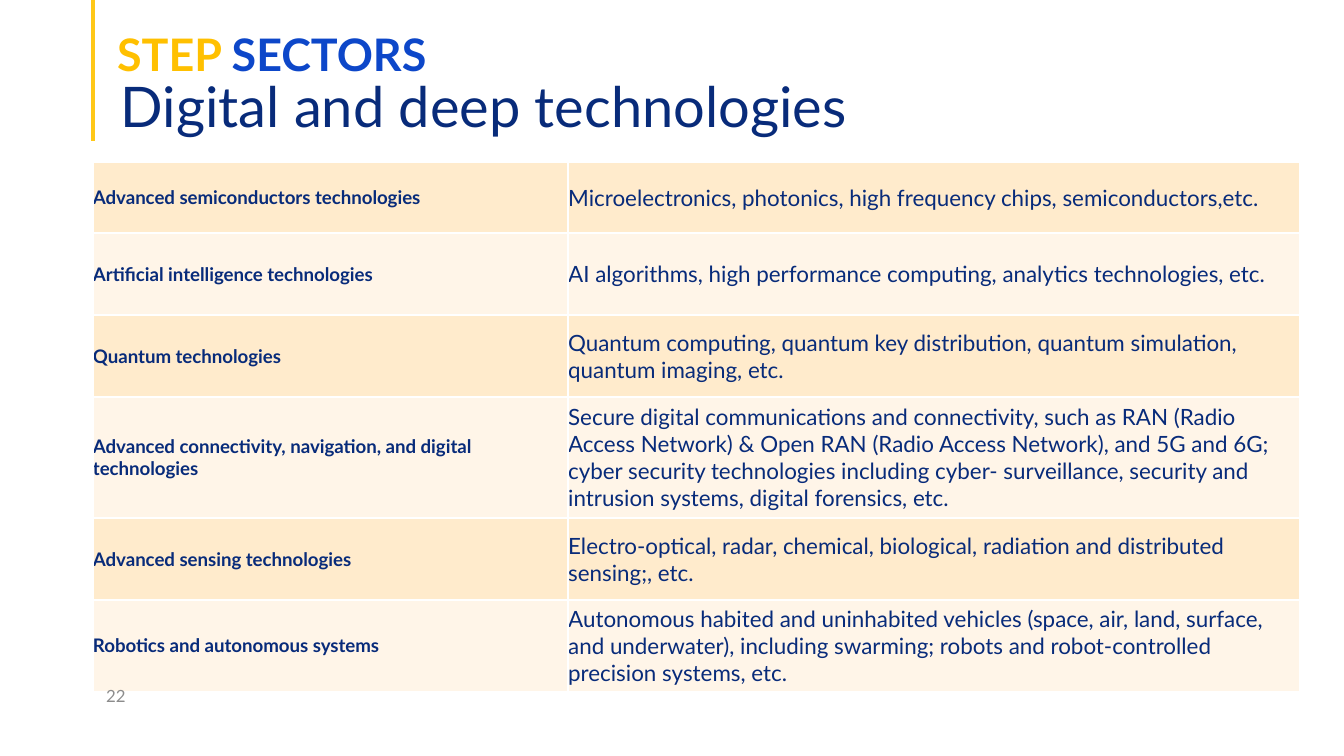
"""Build the STEP sectors slide on digital and deep technologies."""
from lxml import etree
from pptx import Presentation
from pptx.dml.color import RGBColor
from pptx.enum.shapes import MSO_CONNECTOR
from pptx.enum.text import MSO_ANCHOR
from pptx.oxml.ns import qn
from pptx.util import Pt

STRAIGHT = MSO_CONNECTOR.STRAIGHT
TOP, MIDDLE, BOTTOM = MSO_ANCHOR.TOP, MSO_ANCHOR.MIDDLE, MSO_ANCHOR.BOTTOM


class Theme:
    font = "Lato"
    navy = RGBColor.from_string("082B7A")
    blue = RGBColor.from_string("0D47C9")
    amber = RGBColor.from_string("FFC000")
    rule = RGBColor.from_string("FFC817")
    gray = RGBColor.from_string("8C8C8C")
    bands = [RGBColor.from_string("FFEBCC"), RGBColor.from_string("FFF5E8")]
    border = "FFFFFF"
    title_size, kicker_size, body_size, label_size, number_size = 30, 24, 12, 10, 9


def add_text(paragraph, text, size, color=Theme.navy, bold=False):
    run = paragraph.add_run()
    run.text = text
    run.font.name = Theme.font
    run.font.size = Pt(size)
    run.font.bold = bold
    run.font.color.rgb = color


def add_box(left, top, width, height, anchor=TOP, margins=(7.2, 3.6, 7.2, 3.6)):
    frame = slide.shapes.add_textbox(Pt(left), Pt(top), Pt(width), Pt(height)).text_frame
    frame.word_wrap = True
    frame.vertical_anchor = anchor
    frame.margin_left, frame.margin_top, frame.margin_right, frame.margin_bottom = map(Pt, margins)
    return frame.paragraphs[0]


presentation = Presentation()
presentation.slide_width, presentation.slide_height = Pt(720), Pt(405)
slide = presentation.slides.add_slide(presentation.slide_layouts[6])

left_edge = 49.8
rule = slide.shapes.add_connector(STRAIGHT, Pt(left_edge), Pt(0), Pt(left_edge), Pt(75.6))
rule.line.color.rgb = Theme.rule
rule.line.width = Pt(2.25)
etree.SubElement(rule._element.spPr, qn("a:effectLst"))

sectors = [
    (38.2, "Advanced semiconductors technologies",
     "Microelectronics, photonics, high frequency chips, semiconductors,etc."),
    (43.9, "Artificial intelligence technologies",
     "AI algorithms, high performance computing, analytics technologies, etc."),
    (43.9, "Quantum technologies",
     "Quantum computing, quantum key distribution, quantum simulation, quantum imaging, etc."),
    (64.8, "Advanced connectivity, navigation, and digital technologies",
     "Secure digital communications and connectivity, such as RAN (Radio Access Network) "
     "& Open RAN (Radio Access Network), and 5G and 6G; cyber security technologies including "
     "cyber- surveillance, security and intrusion systems, digital forensics, etc."),
    (43.9, "Advanced sensing technologies",
     "Electro-optical, radar, chemical, biological, radiation and distributed sensing;, etc."),
    (49, "Robotics and autonomous systems",
     "Autonomous habited and uninhabited vehicles (space, air, land, surface, and underwater), "
     "including swarming; robots and robot-controlled precision systems, etc."),
]
column_widths = [254.6, 392.2]
table_height = sum(height for height, _, _ in sectors)
table = slide.shapes.add_table(
    len(sectors), len(column_widths), Pt(left_edge), Pt(86.8),
    Pt(sum(column_widths)), Pt(table_height)).table
table.first_row = False
table.horz_banding = False
for column, width in zip(table.columns, column_widths):
    column.width = Pt(width)

for index, (height, label, examples) in enumerate(sectors):
    row = table.rows[index]
    row.height = Pt(height)
    formats = [(label, Theme.label_size, True), (examples, Theme.body_size, False)]
    for cell, (text, size, bold) in zip(row.cells, formats):
        cell.margin_left = cell.margin_top = cell.margin_right = cell.margin_bottom = 0
        cell.vertical_anchor = MIDDLE
        properties = cell._tc.get_or_add_tcPr()
        for side in ("a:lnL", "a:lnR", "a:lnT", "a:lnB"):
            line = etree.SubElement(properties, qn(side), w=str(Pt(1)))
            fill = etree.SubElement(line, qn("a:solidFill"))
            etree.SubElement(fill, qn("a:srgbClr"), val=Theme.border)
        cell.fill.solid()
        cell.fill.fore_color.rgb = Theme.bands[index % 2]
        add_text(cell.text_frame.paragraphs[0], text, size, bold=bold)

number = add_box(left_edge, 362.2, 162, 21.6, anchor=MIDDLE)
add_text(number, "22", Theme.number_size, color=Theme.gray)

title = add_box(57.6, 28.8, 620.6, 46, anchor=BOTTOM, margins=(7.2, 3.6, 7.2, 0))
title.line_spacing = 0.9
add_text(title, "Digital and deep technologies", Theme.title_size)

kicker = add_box(57.6, 11.5, 224, 34.6, margins=(5.2, 2.6, 5.2, 2.6))
add_text(kicker, "STEP ", Theme.kicker_size, color=Theme.amber, bold=True)
add_text(kicker, "SECTORS", Theme.kicker_size, color=Theme.blue, bold=True)

presentation.save("out.pptx")
